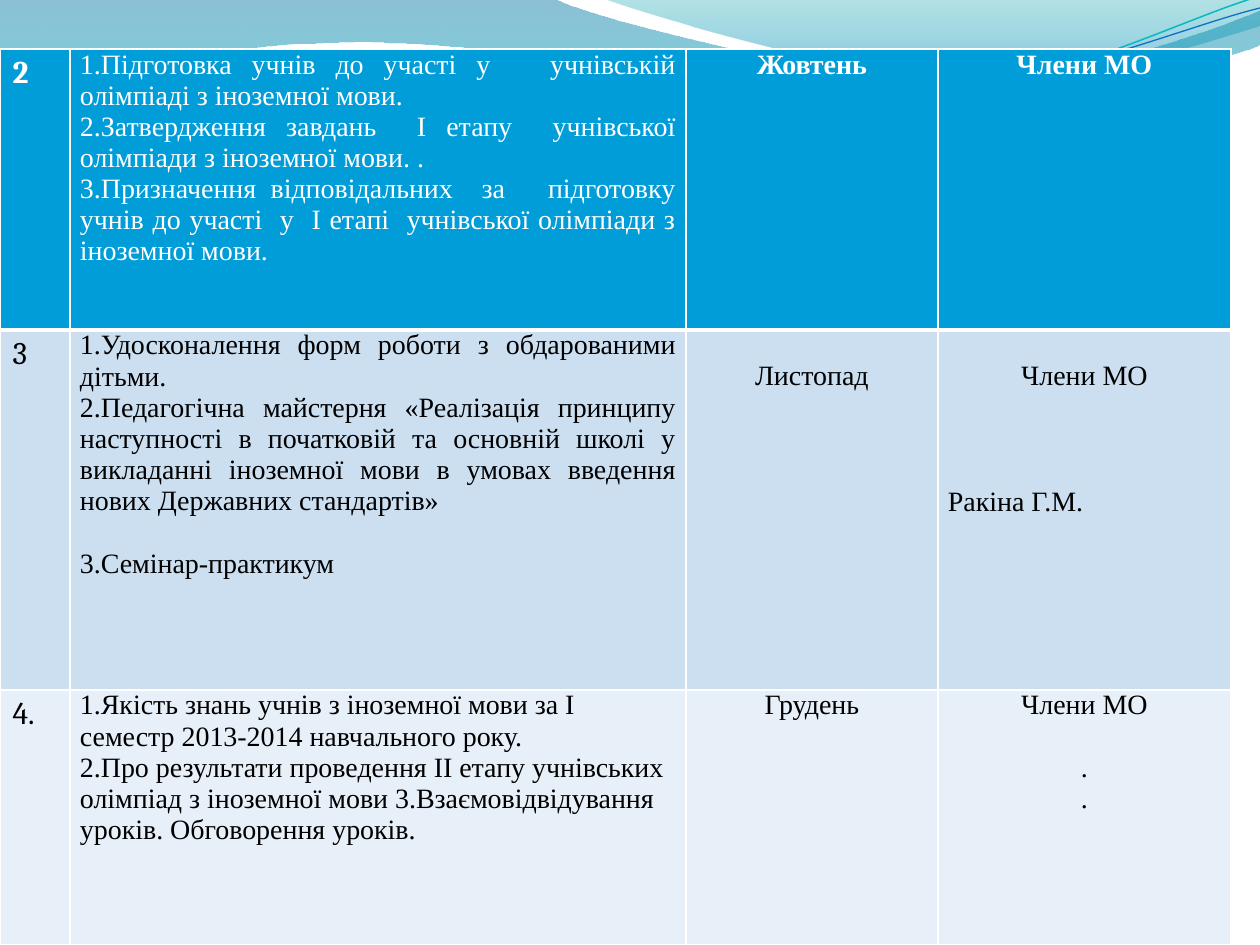
from lxml.etree import SubElement
from pptx import Presentation
from pptx.dml.color import RGBColor
from pptx.enum.text import PP_ALIGN
from pptx.oxml import parse_xml
from pptx.oxml.ns import nsdecls, qn
from pptx.util import Pt

PX = 914400 // 126
LEFT, CENTER, JUSTIFY = PP_ALIGN.LEFT, PP_ALIGN.CENTER, PP_ALIGN.JUSTIFY
THEME = {
    "border": "FFFFFF", "rows": ["009DD9", "CCDFF1", "E7EFF8"],
    "text": ["FFFFFF", "000000", "000000"],
    "number": {"name": "Cambria", "size": Pt(18)},
    "body": {"name": "Times New Roman", "size": Pt(16)},
}
LINE = 31
LINE_PT = 18
MARGIN = 10

TABLE_AT = (0, 49)
COLS = [70, 616, 252, 293]
ROWS = [281, 360, 255]
CELLS = [
    [
        [("2", LEFT, 0)],
        [("1.Підготовка учнів до участі у   учнівській олімпіаді з іноземної мови.", JUSTIFY, 0),
         ("2.Затвердження завдань  І етапу  учнівської олімпіади з іноземної мови. .", JUSTIFY, 0),
         ("3.Призначення відповідальних  за   підготовку учнів до участі  у  І етапі  "
          "учнівської олімпіади з іноземної мови.", JUSTIFY, 0)],
        [("Жовтень", CENTER, 0)],
        [("Члени МО", CENTER, 0)],
    ],
    [
        [("3", LEFT, 0)],
        [("1.Удосконалення форм роботи з обдарованими дітьми.", JUSTIFY, 0),
         ("2.Педагогічна майстерня «Реалізація принципу наступності в початковій та "
          "основній школі у викладанні іноземної мови в умовах введення нових "
          "Державних стандартів»", JUSTIFY, 0),
         ("3.Семінар-практикум", JUSTIFY, 1)],
        [("Листопад", CENTER, 1)],
        [("Члени МО", CENTER, 1), ("Ракіна Г.М.", LEFT, 3)],
    ],
    [
        [("4.", LEFT, 0)],
        [("1.Якість знань учнів з іноземної мови за І семестр 2013-2014 навчального року.", LEFT, 0),
         ("2.Про результати проведення ІІ етапу учнівських олімпіад з іноземної мови "
          "3.Взаємовідвідування  уроків. Обговорення уроків.", LEFT, 0)],
        [("Грудень", CENTER, 0)],
        [("Члени МО", CENTER, 0), (".", CENTER, 1), (".", CENTER, 0)],
    ],
]

WAVES = [
    ([(0, 0), (554, -1), (600, 21, 837, 79, 955, 79), (1075, 79, 1207, 33, 1260, 11),
      (1261, 45), (1239, 55, 1096, 96, 940, 95), (784, 95, 481, 35, 324, 43),
      (163, 45, 58, 105, -1, 142), (0, 0)],
     [(0, "0074A1", 45), (1, "00C6CF", 55)]),
    ([(604, -1), (642, 14, 859, 78, 969, 82), (1079, 87, 1211, 40, 1260, 26), (1260, 0),
      (604, -1)],
     [(0, "00A1A9", 30), (0.8, "008BBF", 45)]),
]
STROKES = [
    ([(0, 140), (60, 117, 199, 72, 349, 66), (498, 59, 747, 112, 898, 101),
      (1050, 89, 1182, 19, 1257, -3)], "0AB8BF", 0.85),
    ([(0, 131), (59, 121, 207, 77, 357, 71), (508, 64, 752, 106, 903, 95),
      (1053, 84, 1186, 26, 1260, 8)], "0F6FC6", 0.75),
]


def set_all(obj, values):
    for name, value in values.items():
        setattr(obj, name, value)


def add_curve(slide, segments, close):
    start, *rest = segments
    points = [seg[i:i + 2] for seg in rest for i in range(0, len(seg), 2)]
    builder = slide.shapes.build_freeform(*start, scale=PX)
    builder.add_line_segments(points, close=close)
    sp = builder.convert_to_shape()
    lines = iter(sp.element.xpath(".//a:lnTo"))
    for seg in rest:
        group = [next(lines) for _ in range(len(seg) // 2)]
        if len(group) == 3:
            group[0].tag = qn("a:cubicBezTo")
            for line in group[1:]:
                group[0].append(line[0])
                line.getparent().remove(line)
    sp.shadow.inherit = False
    return sp


def add_wave(slide, segments, stops):
    sp = add_curve(slide, segments, True)
    sp.line.fill.background()
    sp.fill.gradient()
    sp.fill.gradient_angle = 270
    for stop, (position, color, _) in zip(sp.fill.gradient_stops, stops):
        stop.position = position
        stop.color.rgb = RGBColor.from_string(color)
    for node, (_, _, alpha) in zip(sp.element.xpath(".//a:gs/a:srgbClr"), stops):
        SubElement(node, qn("a:alpha"), val=str(alpha * 1000))


def add_stroke(slide, segments, color, width):
    sp = add_curve(slide, segments, False)
    sp.fill.background()
    sp.line.color.rgb = RGBColor.from_string(color)
    sp.line.width = Pt(width)


def set_borders(cell, widths):
    tc_pr = cell._tc.get_or_add_tcPr()
    for i, (side, width) in enumerate(widths.items()):
        tc_pr.insert(i, parse_xml(
            f'<a:ln{side} {nsdecls("a")} w="{Pt(width)}"><a:solidFill>'
            f'<a:srgbClr val="{THEME["border"]}"/></a:solidFill></a:ln{side}>'))


def fill_cell(cell, row, col, paragraphs):
    cell.fill.solid()
    cell.fill.fore_color.rgb = RGBColor.from_string(THEME["rows"][row])
    set_borders(cell, {"L": 1, "R": 1, "T": 3 if row == 1 else 1, "B": 3 if row == 0 else 1})
    if col:
        set_all(cell, {"margin_left": MARGIN * PX, "margin_right": MARGIN * PX,
                       "margin_top": paragraphs[0][2] * LINE * PX, "margin_bottom": 0})
    tf = cell.text_frame
    for i, (text, align, gap) in enumerate(paragraphs):
        p = tf.add_paragraph() if i else tf.paragraphs[0]
        p.alignment = align
        if i:
            p.space_before = Pt(gap * LINE_PT)
        r = p.add_run()
        r.text = text
        set_all(r.font, THEME["body" if col else "number"])
        r.font.bold = row == 0 and col != 1
        r.font.color.rgb = RGBColor.from_string(THEME["text"][row])


def add_plan(slide):
    x, y = TABLE_AT
    frame = slide.shapes.add_table(len(ROWS), len(COLS), x * PX, y * PX,
                                   sum(COLS) * PX, sum(ROWS) * PX)
    table = frame.table
    for col, width in zip(table.columns, COLS):
        col.width = width * PX
    for row, height in zip(table.rows, ROWS):
        row.height = height * PX
    for i, row in enumerate(CELLS):
        for j, paragraphs in enumerate(row):
            fill_cell(table.cell(i, j), i, j, paragraphs)


def main():
    prs = Presentation()
    set_all(prs, {"slide_width": 9144000, "slide_height": 6858000})
    slide = prs.slides.add_slide(prs.slide_layouts[6])
    for wave in WAVES:
        add_wave(slide, *wave)
    for stroke in STROKES:
        add_stroke(slide, *stroke)
    add_plan(slide)
    prs.save("out.pptx")


if __name__ == "__main__":
    main()
